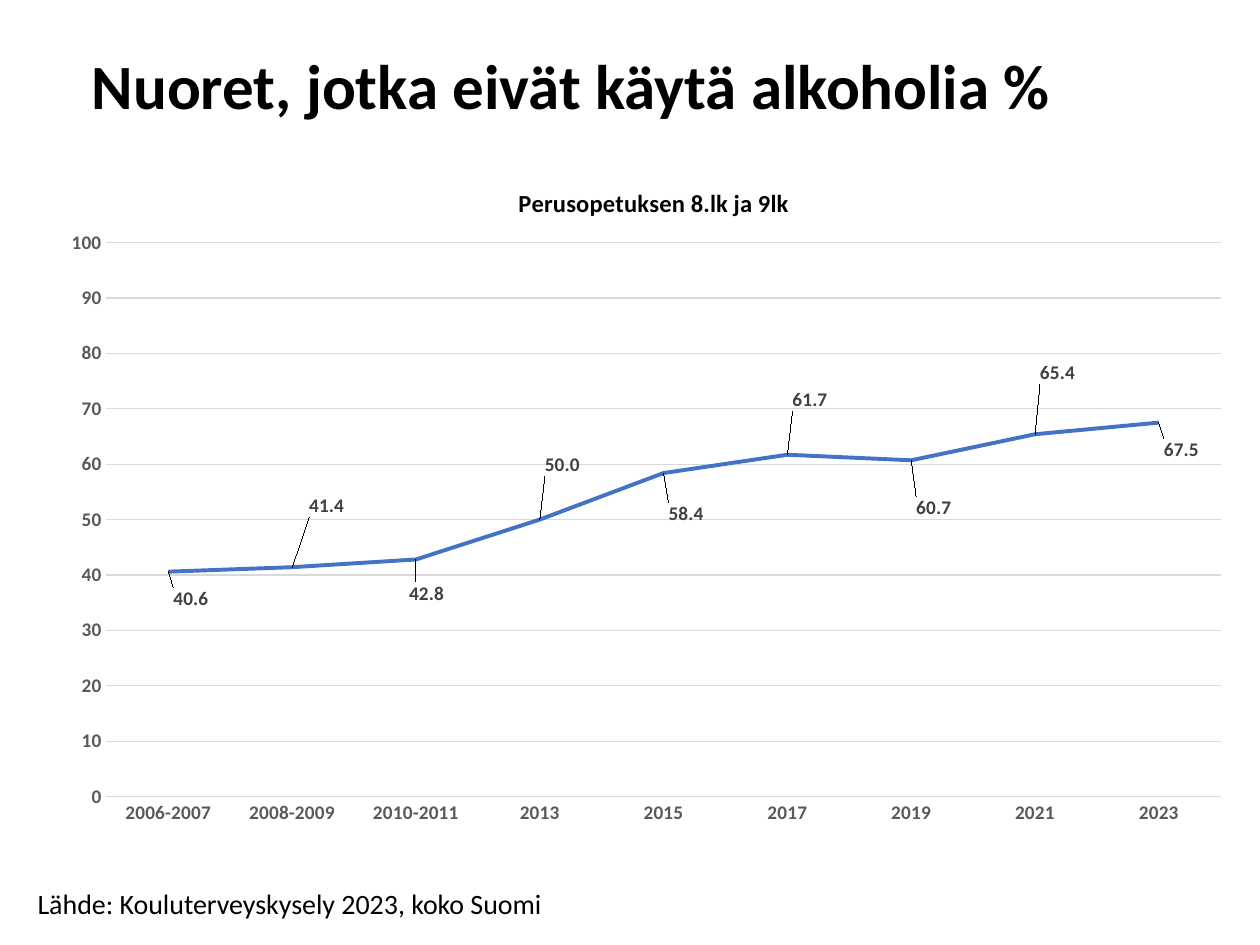
from dataclasses import dataclass

from lxml import etree
from pptx import Presentation
from pptx.chart.data import CategoryChartData
from pptx.dml.color import RGBColor
from pptx.enum.chart import XL_CHART_TYPE, XL_LABEL_POSITION, XL_MARKER_STYLE, XL_TICK_MARK
from pptx.enum.text import MSO_ANCHOR
from pptx.oxml.ns import qn
from pptx.util import Pt

LINE_CHART = XL_CHART_TYPE.LINE
LABEL_RIGHT = XL_LABEL_POSITION.RIGHT
NO_MARKER = XL_MARKER_STYLE.NONE
NO_TICK = XL_TICK_MARK.NONE
MIDDLE, TOP = MSO_ANCHOR.MIDDLE, MSO_ANCHOR.TOP

FONT = "Calibri"
COLORS = {"text": "000000", "axis": "595959", "grid": "D9D9D9",
          "label": "404040", "series": "4472C4"}
LABEL_FORMAT = "#,##0.0"


@dataclass
class TextItem:
    text: str
    left: float
    top: float
    width: float
    height: float
    size: float
    bold: bool
    wrap: bool
    anchor: MSO_ANCHOR
    line_spacing: float


@dataclass
class Survey:
    years: str
    percent: float
    label_dx: float  # label shift as a share of the chart size
    label_dy: float


TEXTS = [
    TextItem("Nuoret, jotka eivät käytä alkoholia %",
             45.4, 10, 657.4, 81.4, 36, True, True, MIDDLE, 0.9),
    TextItem("Lähde: Kouluterveyskysely 2023, koko Suomi",
             14.4, 503.3, 314.6, 26.6, 16, False, False, TOP, 1),
]

SURVEYS = [
    Survey("2006-2007", 40.6, 0, 0.04),
    Survey("2008-2009", 41.4, 0.01, -0.09),
    Survey("2010-2011", 42.8, -0.01, 0.05),
    Survey("2013", 50, 0, -0.08),
    Survey("2015", 58.4, 0, 0.06),
    Survey("2017", 61.7, 0, -0.08),
    Survey("2019", 60.7, 0, 0.07),
    Survey("2021", 65.4, 0, -0.09),
    Survey("2023", 67.5, 0, 0.04),
]


def color(name: str) -> RGBColor:
    return RGBColor.from_string(COLORS[name])


def style_font(font, size: float, name: str, bold: bool) -> None:
    font.name = FONT
    font.size = Pt(size)
    font.bold = bold
    font.color.rgb = color(name)


def style_line(line, name: str, width: float) -> None:
    line.color.rgb = color(name)
    line.width = Pt(width)


def make_layout(**settings) -> etree._Element:
    """Return a manual chart layout with the given settings in schema order."""
    layout = etree.Element(qn("c:layout"))
    manual = etree.SubElement(layout, qn("c:manualLayout"))
    for tag, value in settings.items():
        etree.SubElement(manual, qn(f"c:{tag}")).set("val", str(value))
    return layout


def draw_text(page, item: TextItem) -> None:
    box = page.shapes.add_textbox(Pt(item.left), Pt(item.top), Pt(item.width), Pt(item.height))
    frame = box.text_frame
    frame.word_wrap = item.wrap
    frame.vertical_anchor = item.anchor
    frame.text = item.text
    para = frame.paragraphs[0]
    para.line_spacing = item.line_spacing
    style_font(para.runs[0].font, item.size, "text", item.bold)


def style_axes(chart) -> None:
    for axis in (chart.category_axis, chart.value_axis):
        axis.major_tick_mark = NO_TICK
        axis.minor_tick_mark = NO_TICK
        style_font(axis.tick_labels.font, 11, "axis", True)
    style_line(chart.category_axis.format.line, "grid", 0.75)
    values = chart.value_axis
    values.minimum_scale, values.maximum_scale, values.major_unit = 0, 100, 10
    values.tick_labels.number_format = "#,##0"
    values.tick_labels.number_format_is_linked = False
    values.format.line.fill.background()
    style_line(values.major_gridlines.format.line, "grid", 0.75)


def style_labels(plot, series) -> None:
    plot.has_data_labels = True
    labels = plot.data_labels
    labels.show_value = True
    labels.number_format = LABEL_FORMAT
    labels.number_format_is_linked = False
    style_font(labels.font, 11, "label", True)
    for index, survey in enumerate(SURVEYS):
        label = series.points[index].data_label
        style_font(label.font, 11, "label", True)
        label.position = LABEL_RIGHT
    # Shift each label off the line
    for element, survey in zip(series._element.iter(qn("c:dLbl")), SURVEYS):
        layout = make_layout(x=survey.label_dx, y=survey.label_dy)
        element.find(qn("c:idx")).addnext(layout)
        number = etree.Element(qn("c:numFmt"), formatCode=LABEL_FORMAT, sourceLinked="0")
        layout.addnext(number)


def draw_chart(page) -> None:
    data = CategoryChartData(number_format=LABEL_FORMAT)
    data.categories = [survey.years for survey in SURVEYS]
    data.add_series("Series 1", [survey.percent for survey in SURVEYS])
    chart = page.shapes.add_chart(
        LINE_CHART, Pt(26.6), Pt(87.8), Pt(684.7), Pt(391), data).chart
    style_font(chart.font, 10, "text", False)
    chart.has_legend = False

    # Chart title
    chart.has_title = True
    title = chart.chart_title
    title.text_frame.text = "Perusopetuksen 8.lk ja 9lk"
    style_font(title.text_frame.paragraphs[0].runs[0].font, 14, "text", True)
    title.include_in_layout = False
    title_element = title._element
    for old in title_element.findall(qn("c:layout")):
        title_element.remove(old)
    title_element.find(qn("c:tx")).addnext(
        make_layout(xMode="edge", yMode="edge", x=0.39, y=0.04))

    # Plot area
    area = chart._chartSpace.chart.plotArea
    for old in area.findall(qn("c:layout")):
        area.remove(old)
    area.insert(0, make_layout(layoutTarget="inner", xMode="edge", yMode="edge",
                               x=0.05, y=0.13, w=0.93, h=0.81))
    style_axes(chart)

    # Line and its labels
    plot = chart.plots[0]
    plot.vary_by_categories = False
    series = plot.series[0]
    series.smooth = False
    series.marker.style = NO_MARKER
    style_line(series.format.line, "series", 2.25)
    style_labels(plot, series)


def main() -> None:
    deck = Presentation()
    deck.slide_width, deck.slide_height = Pt(720), Pt(540)
    page = deck.slides.add_slide(deck.slide_layouts[6])
    for item in TEXTS:
        draw_text(page, item)
    draw_chart(page)
    deck.save("out.pptx")


if __name__ == "__main__":
    main()
